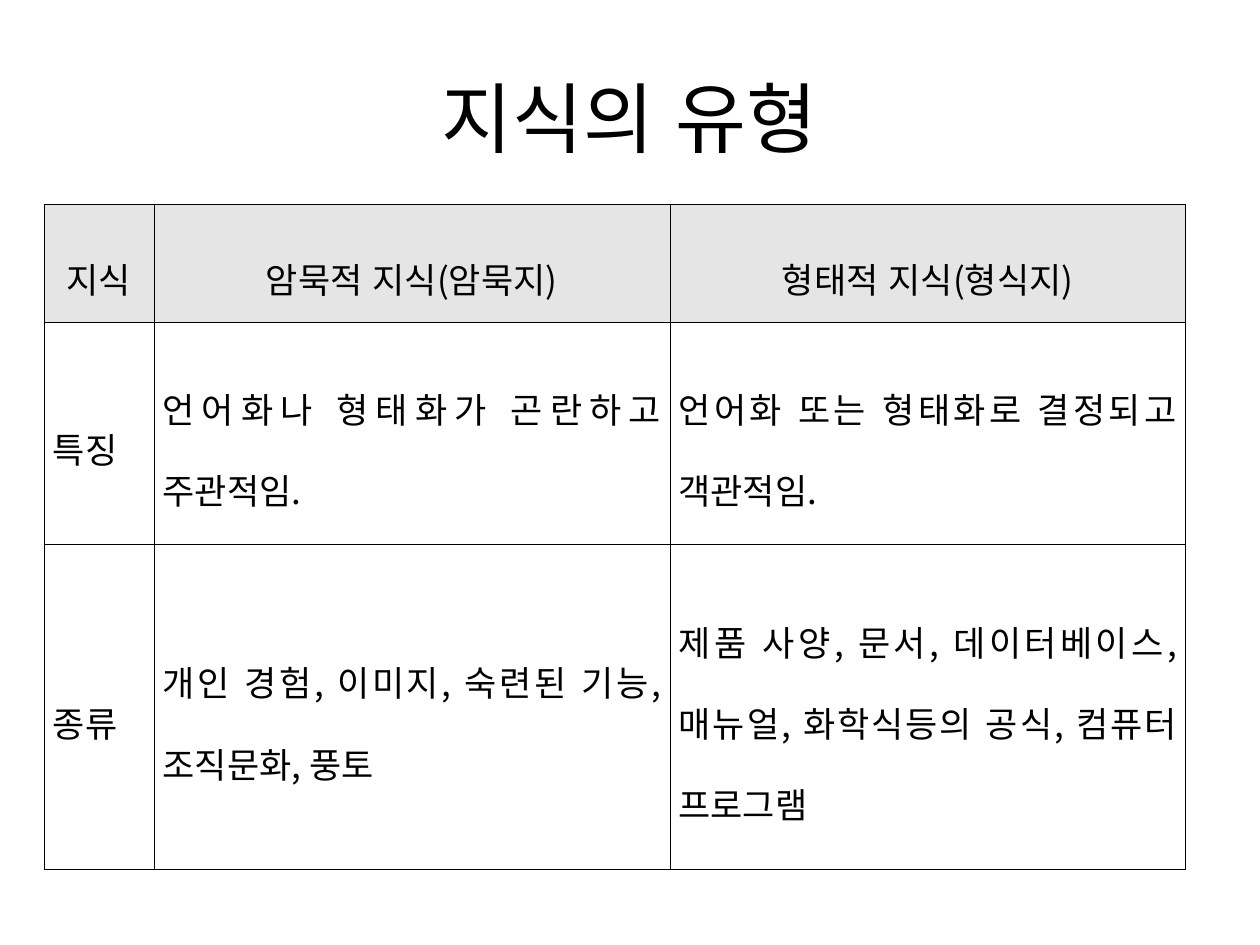
import pptx
import pptx.util
import pptx.dml.color
import pptx.enum.lang
import pptx.enum.text
import pptx.oxml
import pptx.oxml.ns

Inches = pptx.util.Inches
Pt = pptx.util.Pt
ALIGN = pptx.enum.text.PP_ALIGN
MID = pptx.enum.text.MSO_ANCHOR.MIDDLE
FACE = "Noto Sans CJK KR"
INK = "000000"
SHADE = "E5E5E5"

TITLE = "지식의 유형"
COLS = [0.87, 4.09, 4.09]
ROWS = [0.94, 1.76, 2.58]
CELLS = [
    ["지식", "암묵적 지식(암묵지)", "형태적 지식(형식지)"],
    ["특징", "언어화나 형태화가 곤란하고 주관적임.",
     "언어화 또는 형태화로 결정되고 객관적임."],
    ["종류", "개인 경험, 이미지, 숙련된 기능, 조직문화, 풍토",
     "제품 사양, 문서, 데이터베이스, 매뉴얼, 화학식등의 공식, 컴퓨터 프로그램"],
]


def tint(color, code):
    color.rgb = pptx.dml.color.RGBColor.from_string(code)


def style(frame, size, align, space=None):
    for para in frame.paragraphs:
        para.alignment = align
        para.line_spacing = space
        for run in para.runs:
            font = run.font
            font.size = Pt(size)
            font.name = FACE
            font.language_id = pptx.enum.lang.MSO_LANGUAGE_ID.KOREAN
            tint(font.color, INK)
            pptx.oxml.ns.qn("a:ea")
            east = run._r.get_or_add_rPr().makeelement(
                pptx.oxml.ns.qn("a:ea"), {"typeface": FACE})
            run._r.get_or_add_rPr().append(east)


def edge(cell, width, code):
    props = cell._tc.get_or_add_tcPr()
    for spot, side in enumerate(["lnL", "lnR", "lnT", "lnB"]):
        line = pptx.oxml.parse_xml(
            f'<a:{side} {pptx.oxml.ns.nsdecls("a")} w="{Pt(width)}">'
            f'<a:solidFill><a:srgbClr val="{code}"/></a:solidFill></a:{side}>')
        props.insert(spot, line)


def add_title(slide, left, top, width, height):
    title = slide.shapes.title
    title.left, title.top = Inches(left), Inches(top)
    title.width, title.height = Inches(width), Inches(height)
    frame = title.text_frame
    frame.text = TITLE
    frame.vertical_anchor = MID
    style(frame, 44, ALIGN.CENTER)


def fill_cell(cell, text, head):
    cell.text_frame.text = text
    cell.vertical_anchor = MID
    cell.margin_left = cell.margin_right = Inches(0.07)
    cell.margin_top = cell.margin_bottom = Inches(0.02)
    style(cell.text_frame, 20, ALIGN.CENTER if head else ALIGN.JUSTIFY, 1.6)
    if head:
        cell.fill.solid()
        tint(cell.fill.fore_color, SHADE)
    else:
        cell.fill.background()
    edge(cell, 0.28, INK)


def add_grid(slide, left, top, width, height):
    grid = slide.shapes.add_table(
        len(ROWS), len(COLS), Inches(left), Inches(top),
        Inches(width), Inches(height)).table
    for col, part in zip(grid.columns, COLS):
        col.width = Inches(width * part / sum(COLS))
    for row, part in zip(grid.rows, ROWS):
        row.height = Inches(height * part / sum(ROWS))
    for r, texts in enumerate(CELLS):
        for c, text in enumerate(texts):
            fill_cell(grid.cell(r, c), text, r == 0)


def main():
    deck = pptx.Presentation()
    deck.slide_width, deck.slide_height = Inches(10), Inches(7.5)
    slide = deck.slides.add_slide(deck.slide_layouts[5])
    add_title(slide, 0.5, 0.3, 9, 1.25)
    add_grid(slide, 0.35, 1.62, 9.06, 5.28)
    deck.save("out.pptx")


if __name__ == "__main__":
    main()
